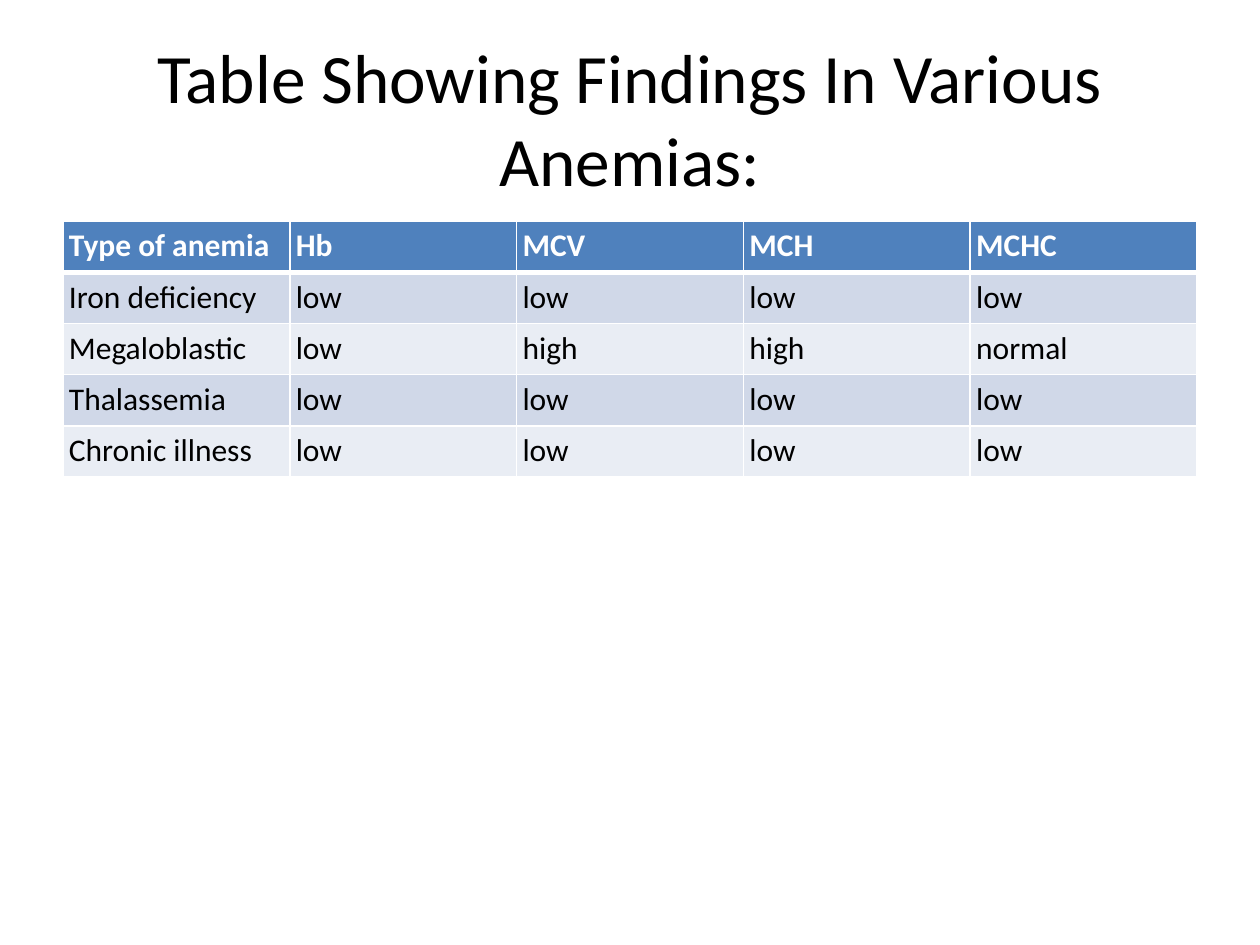
from collections import namedtuple
from dataclasses import dataclass

from lxml.etree import SubElement
from pptx import Presentation
from pptx.dml.color import RGBColor
from pptx.enum.text import MSO_ANCHOR, PP_ALIGN
from pptx.oxml.ns import qn
from pptx.util import Emu, Pt

Box = namedtuple("Box", "left top width height")


@dataclass(frozen=True)
class Theme:
    font: str = "Calibri"
    title_size: float = 39.6
    cell_size: int = 18
    ink: str = "000000"
    paper: str = "FFFFFF"
    header: str = "4F81BD"
    bands: tuple = ("D0D8E8", "E9EDF4")
    border: int = 1
    header_rule: int = 3


THEME = Theme()
FINDINGS = [
    ["Type of anemia", "Hb", "MCV", "MCH", "MCHC"],
    ["Iron deficiency", "low", "low", "low", "low"],
    ["Megaloblastic", "low", "high", "high", "normal"],
    ["Thalassemia", "low", "low", "low", "low"],
    ["Chronic illness", "low", "low", "low", "low"],
]


def px(length):
    return Emu(length * 914400 // 126)


def style_para(para, size, color, bold=False):
    font = para.font
    font.name = THEME.font
    font.size = Pt(size)
    font.bold = bold
    font.color.rgb = RGBColor.from_string(color)


def add_title(page, box, text):
    frame = page.shapes.add_textbox(*map(px, box)).text_frame
    frame.word_wrap = True
    frame.vertical_anchor = MSO_ANCHOR.MIDDLE
    para = frame.paragraphs[0]
    para.text = text
    para.alignment = PP_ALIGN.CENTER
    style_para(para, THEME.title_size, THEME.ink)


def add_borders(cell, top, bottom):
    properties = cell._tc.get_or_add_tcPr()
    widths = {"lnL": THEME.border, "lnR": THEME.border, "lnT": top, "lnB": bottom}
    for index, (side, width) in enumerate(widths.items()):
        line = SubElement(properties, qn(f"a:{side}"), w=str(Pt(width)))
        fill = SubElement(line, qn("a:solidFill"))
        SubElement(fill, qn("a:srgbClr"), val=THEME.paper)
        properties.insert(index, line)


def fill_cell(cell, text, row):
    is_header = row == 0
    cell.margin_left = cell.margin_right = px(6)
    cell.margin_top = cell.margin_bottom = px(6)
    cell.fill.solid()
    color = THEME.header if is_header else THEME.bands[(row - 1) % 2]
    cell.fill.fore_color.rgb = RGBColor.from_string(color)
    add_borders(
        cell,
        top=THEME.header_rule if row == 1 else THEME.border,
        bottom=THEME.header_rule if is_header else THEME.border,
    )
    para = cell.text_frame.paragraphs[0]
    para.text = text
    style_para(para, THEME.cell_size, THEME.paper if is_header else THEME.ink, is_header)


def add_findings(page, box, rows):
    table = page.shapes.add_table(len(rows), len(rows[0]), *map(px, box)).table
    for row, texts in enumerate(rows):
        for column, text in enumerate(texts):
            fill_cell(table.cell(row, column), text, row)


def main():
    deck = Presentation()
    deck.slide_width, deck.slide_height = px(1260), px(945)
    page = deck.slides.add_slide(deck.slide_layouts[6])
    add_title(page, Box(63, 38, 1134, 158), "Table Showing Findings In Various Anemias:")
    add_findings(page, Box(63, 221, 1134, 256), FINDINGS)
    deck.save("out.pptx")


if __name__ == "__main__":
    main()
